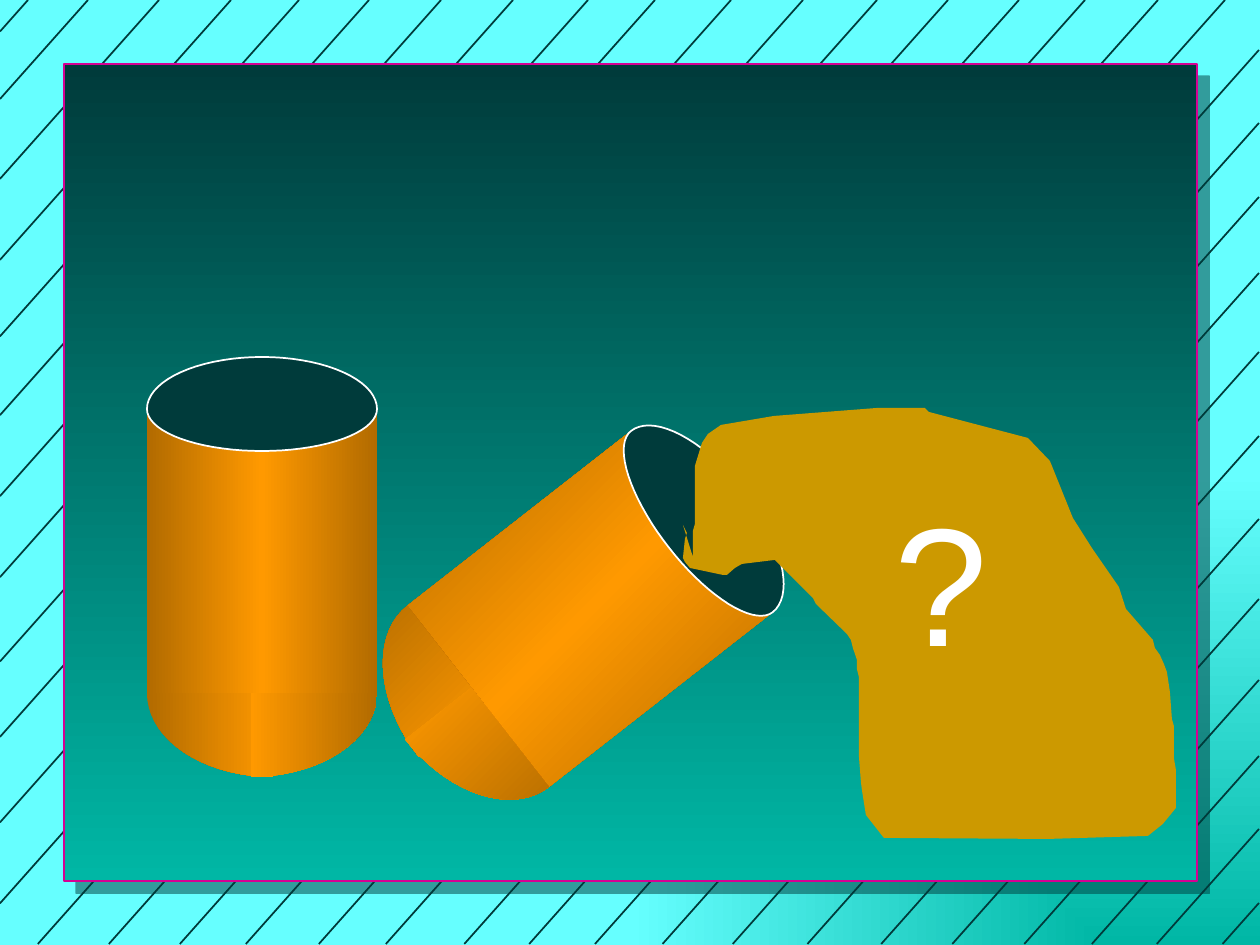
import math
import pptx
import pptx.dml.color
import pptx.enum.shapes
import pptx.oxml
import pptx.oxml.ns
import pptx.util

RGB = pptx.dml.color.RGBColor
DARK = RGB(0x00, 0x3B, 0x3B)
TEAL = RGB(0x00, 0xB7, 0xA5)
CYAN = RGB(0x66, 0xFF, 0xFF)
PINK = RGB(0xD6, 0x00, 0x93)
BROWN = RGB(0xB2, 0x6B, 0x00)
ORANGE = RGB(0xFF, 0x99, 0x00)
GOLD = RGB(0xCC, 0x99, 0x00)
WHITE = RGB(0xFF, 0xFF, 0xFF)
NS = pptx.oxml.ns.nsdecls("a")
qn = pptx.oxml.ns.qn
PX = 914400 / 126


def px(*nums):
    """Turn px into EMU."""
    return [round(n * PX) for n in nums]


def shade(fill, root, hues, angle):
    """Spread the hues evenly along an angle that stays fixed to the page."""
    fill.gradient()
    grad = root.find(".//" + qn("a:gradFill"))
    grad.set("rotWithShape", "0")
    stops = grad.find(qn("a:gsLst"))
    for stop in list(stops):
        stops.remove(stop)
    for i, hue in enumerate(hues):
        pos = 100000 * i // (len(hues) - 1)
        stops.append(pptx.oxml.parse_xml(
            f'<a:gs {NS} pos="{pos}"><a:srgbClr val="{hue}"/></a:gs>'))
    grad.find(qn("a:lin")).set("ang", str(angle * 60000))
    return grad


deck = pptx.Presentation()
deck.slide_width, deck.slide_height = px(1260, 945)
slide = deck.slides.add_slide(deck.slide_layouts[6])
shapes = slide.shapes
kinds = pptx.enum.shapes.MSO_SHAPE

# Background glows from the lower right corner
grad = shade(slide.background.fill, slide._element, [TEAL, CYAN], 0)
grad.replace(grad.find(qn("a:lin")), pptx.oxml.parse_xml(
    f'<a:path {NS} path="rect"><a:fillToRect l="100000" t="100000"/></a:path>'))

# Hatching: every line falls 9 px for each 8 px to the left
tops = [88, 159, 231, 299, 369, 441, 513, 588, 655, 731, 803, 877, 948,
        1019, 1085, 1158, 1225, 28]
sides = [123, 197, 273, 352, 436, 519, 599, 680, 756, 829, 903, 50]
for x, y in [(x, 0) for x in tops] + [(1259, y) for y in sides]:
    run = min(x, (944 - y) * 8 / 9)
    line = shapes.add_connector(pptx.enum.shapes.MSO_CONNECTOR.STRAIGHT,
                                *px(x, y, x - run, y + run * 9 / 8))
    line.line.color.rgb = DARK
    line.line.width = pptx.util.Pt(1)
    line._element.spPr.append(pptx.oxml.parse_xml(f"<a:effectLst {NS}/>"))

# Panel
panel = shapes.add_shape(kinds.RECTANGLE, *px(64, 64, 1133, 817))
shade(panel.fill, panel._element.spPr, [DARK, TEAL], 90)
panel.line.color.rgb = PINK
panel.line.width = pptx.util.Pt(1)
panel._element.spPr.append(pptx.oxml.parse_xml(
    f'<a:effectLst {NS}><a:outerShdw dist="125730" dir="2700000" algn="ctr" '
    f'rotWithShape="0"><a:srgbClr val="{DARK}"><a:alpha val="50000"/>'
    '</a:srgbClr></a:outerShdw></a:effectLst>'))

# Cylinder parts, as points around the middle of an upright body
WIDE, LONG = 115, 142
arc = [math.radians(a) for a in range(0, 91, 5)]
ring = [math.radians(a) for a in range(0, 360, 5)]
mouth = [(WIDE * math.cos(a), -LONG + (42 if a < math.pi else 52) * math.sin(a))
         for a in ring]
left = [(11, LONG)] + [(11 - 126 * math.cos(a), LONG + 84 * math.sin(a)) for a in arc]
right = [(-x, y) for x, y in left]
body = [(-WIDE, -LONG), (WIDE, -LONG), (WIDE, LONG), (-WIDE, LONG)]
parts = [(body, [BROWN, ORANGE, BROWN]), (mouth, None),
         (left, [BROWN, ORANGE]), (right, [ORANGE, BROWN])]

# The second cylinder lies on its side, then is tipped up by 38 degrees
for midx, midy, lying, tilt, angle in [(262, 551, False, 0, 0),
                                       (590, 609, True, -38, 45)]:
    cos, sin = math.cos(math.radians(tilt)), math.sin(math.radians(tilt))
    for pts, hues in parts:
        if lying:
            pts = [(-y, x) for x, y in pts]
        xs, ys = zip(*pts)
        wide, high = max(xs) - min(xs), max(ys) - min(ys)
        cx, cy = min(xs) + wide / 2, min(ys) + high / 2
        atx = midx + cx * cos - cy * sin
        aty = midy + cx * sin + cy * cos
        if len(pts) == 4:
            part = shapes.add_shape(kinds.RECTANGLE, *px(
                atx - wide / 2, aty - high / 2, wide, high))
        else:
            spots = [px(x - cx + atx, y - cy + aty) for x, y in pts]
            form = shapes.build_freeform(*spots[0])
            form.add_line_segments(spots[1:])
            part = form.convert_to_shape()
        part.rotation = tilt % 360
        part.shadow.inherit = False
        if hues:
            shade(part.fill, part._element.spPr, hues, angle)
            part.line.fill.background()
        else:
            part.fill.solid()
            part.fill.fore_color.rgb = DARK
            part.line.color.rgb = WHITE
            part.line.width = pptx.util.Pt(1)

# Blob pouring out
edge = [(693, 557), (693, 531), (695, 524), (695, 466), (702, 443), (708, 434),
        (721, 425), (774, 416), (877, 408), (925, 408), (929, 412), (1028, 438),
        (1050, 461), (1073, 518), (1092, 548), (1119, 587), (1126, 609),
        (1153, 640), (1155, 648), (1160, 655), (1164, 664), (1167, 672),
        (1170, 692), (1172, 719), (1174, 726), (1174, 758), (1176, 770),
        (1176, 808), (1163, 824), (1148, 836), (1048, 839), (884, 838),
        (866, 815), (862, 790), (861, 782), (859, 756), (859, 677), (857, 669),
        (857, 660), (853, 648), (851, 640), (847, 634), (816, 604), (813, 598),
        (775, 560), (742, 564), (735, 568), (727, 575), (723, 575), (690, 568),
        (685, 562), (683, 558), (685, 539), (687, 533), (683, 525)]
form = shapes.build_freeform(*edge[0], scale=PX)
form.add_line_segments(edge[1:])
blob = form.convert_to_shape()
blob.shadow.inherit = False
blob.fill.solid()
blob.fill.fore_color.rgb = GOLD
blob.line.fill.background()

# Question mark
box = shapes.add_textbox(*px(882, 472, 336, 214))
box.text_frame.word_wrap = True
para = box.text_frame.paragraphs[0]
para.space_before = pptx.util.Pt(11)
mark = para.add_run()
mark.text = "?"
mark.font.name = "Arial"
mark.font.size = pptx.util.Pt(96)
mark.font.color.rgb = WHITE

deck.save("out.pptx")
